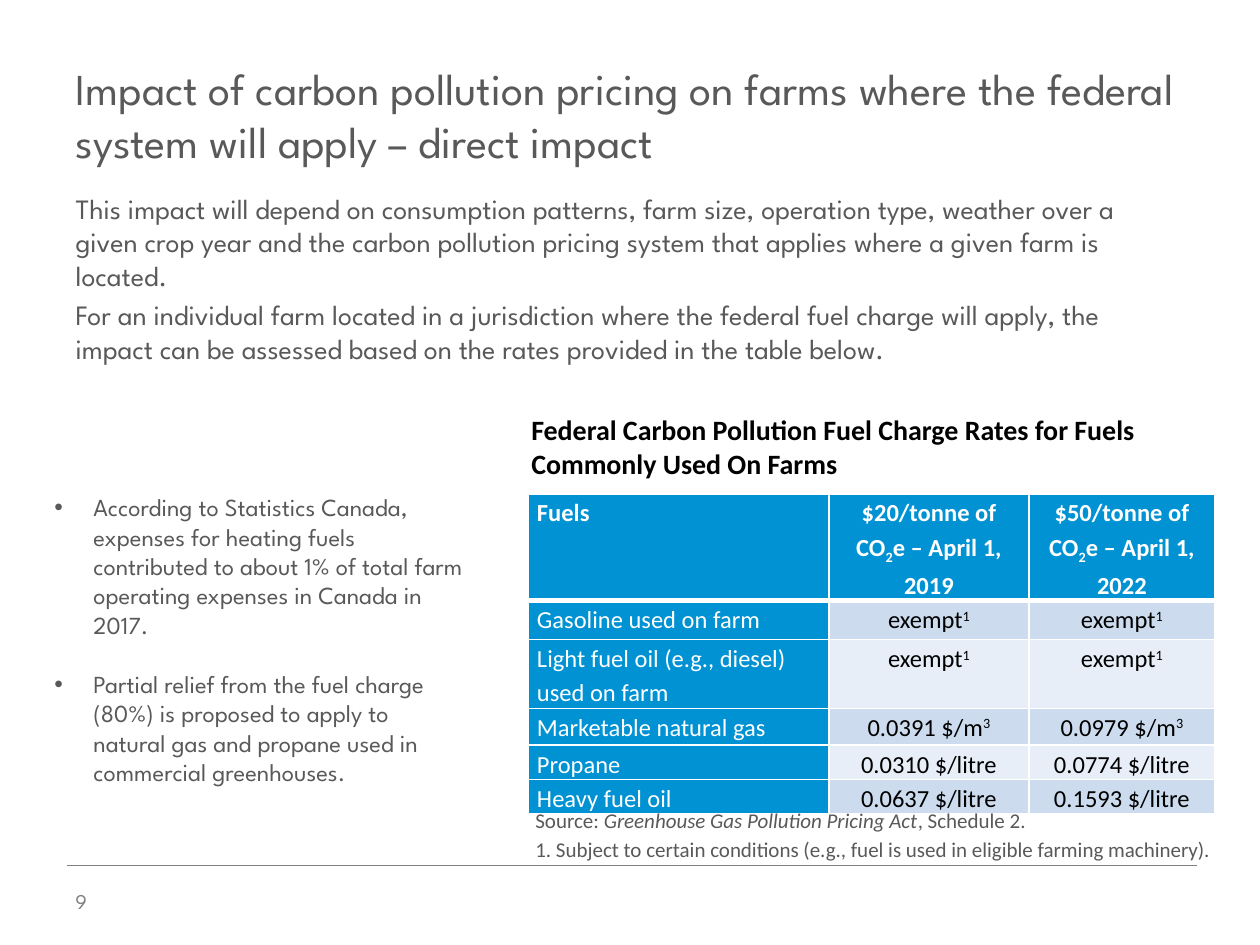
from dataclasses import dataclass, replace

from lxml import etree
from pptx import Presentation
from pptx.dml.color import RGBColor
from pptx.enum.shapes import MSO_CONNECTOR
from pptx.enum.text import MSO_ANCHOR, MSO_AUTO_SIZE, PP_ALIGN
from pptx.oxml.ns import qn
from pptx.util import Emu, Pt

PX_PER_INCH = 126
EMU_PER_INCH = 914400

LEFT, CENTER = PP_ALIGN.LEFT, PP_ALIGN.CENTER
TOP, MIDDLE, BOTTOM = MSO_ANCHOR.TOP, MSO_ANCHOR.MIDDLE, MSO_ANCHOR.BOTTOM
STRAIGHT = MSO_CONNECTOR.STRAIGHT
NO_AUTOFIT = MSO_AUTO_SIZE.NONE

WHITE = RGBColor(0xFF, 0xFF, 0xFF)
BLACK = RGBColor(0x00, 0x00, 0x00)
DARK_GRAY = RGBColor(0x59, 0x59, 0x59)
GRAY = RGBColor(0x7F, 0x7F, 0x7F)
BLUE = RGBColor(0x00, 0x92, 0xD2)
BAND_DARK = RGBColor(0xCC, 0xDC, 0xEE)
BAND_LIGHT = RGBColor(0xE7, 0xEE, 0xF7)

SUBSCRIPT, SUPERSCRIPT = -25000, 30000
BULLET_INDENT = 39


@dataclass(frozen=True)
class Box:
    left: int
    top: int
    width: int
    height: int


@dataclass(frozen=True)
class Style:
    font: str
    size: float
    color: RGBColor
    bold: bool = False


@dataclass(frozen=True)
class Piece:
    text: str
    baseline: int = 0
    italic: bool = False


@dataclass(frozen=True)
class Layout:
    align: PP_ALIGN = LEFT
    line_spacing: float = 1.0
    gap: float = 0
    bullet: str = ""


Line = list[Piece]

TITLE = Style("League Spartan", 25.2, DARK_GRAY)
BODY = replace(TITLE, size=16)
BULLETS = replace(TITLE, size=14)
PAGE_NUMBER = Style("League Spartan", 12, GRAY)
CAPTION = Style("Calibri", 16, BLACK, True)
NOTE = Style("Calibri", 12, DARK_GRAY)
HEADER = Style("Calibri", 14, WHITE, True)
FUEL = replace(HEADER, bold=False)
RATE = replace(FUEL, color=BLACK)

TABLE_BOX = Box(528, 494, 687, 230)
COLUMN_WIDTHS = [301, 200, 186]
ROW_HEIGHTS = [58, 39, 38, 37, 29, 29]


def header_line(price: str, year: str) -> Line:
    return [Piece(f"{price}/tonne of CO"), Piece("2", SUBSCRIPT), Piece(f"e – April 1, {year}")]


def raised(text: str, mark: str) -> Line:
    return [Piece(text), Piece(mark, SUPERSCRIPT)]


EXEMPT = raised("exempt", "1")
FUEL_ROWS = [
    [[Piece("Fuels")], header_line("$20", "2019"), header_line("$50", "2022")],
    [[Piece("Gasoline used on farm")], EXEMPT, EXEMPT],
    [[Piece("Light fuel oil (e.g., diesel) used on farm")], EXEMPT, EXEMPT],
    [[Piece("Marketable natural gas")], raised("0.0391 $/m", "3"), raised("0.0979 $/m", "3")],
    [[Piece("Propane")], [Piece("0.0310 $/litre")], [Piece("0.0774 $/litre")]],
    [[Piece("Heavy fuel oil")], [Piece("0.0637 $/litre")], [Piece("0.1593 $/litre")]],
]


def px(value: int) -> Emu:
    return Emu(round(value * EMU_PER_INCH / PX_PER_INCH))


def set_bullet(paragraph, bullet: str) -> None:
    indent = px(BULLET_INDENT) if bullet else 0
    properties = paragraph._p.get_or_add_pPr()
    properties.set("marL", str(indent))
    properties.set("indent", str(-indent))
    if bullet:
        etree.SubElement(properties, qn("a:buFont")).set("typeface", "Arial")
        etree.SubElement(properties, qn("a:buChar")).set("char", bullet)
    else:
        etree.SubElement(properties, qn("a:buNone"))


def write(text_frame, lines: list[Line], style: Style, layout: Layout = Layout()) -> None:
    for index, line in enumerate(lines):
        paragraph = text_frame.add_paragraph() if index else text_frame.paragraphs[0]
        set_bullet(paragraph, layout.bullet)
        paragraph.alignment = layout.align
        paragraph.line_spacing = layout.line_spacing
        paragraph.space_before = Pt(layout.gap if index else 0)
        for piece in line:
            run = paragraph.add_run()
            run.text = piece.text
            run.font.name = style.font
            run.font.size = Pt(style.size)
            run.font.bold = style.bold
            run.font.italic = piece.italic
            run.font.color.rgb = style.color
            if piece.baseline:
                run._r.get_or_add_rPr().set("baseline", str(piece.baseline))


def fill_text(shape, box: Box, lines: list[Line], style: Style,
              layout: Layout = Layout(), anchor: MSO_ANCHOR = TOP) -> None:
    shape.left, shape.top = px(box.left), px(box.top)
    shape.width, shape.height = px(box.width), px(box.height)
    text_frame = shape.text_frame
    text_frame.word_wrap = True
    text_frame.auto_size = NO_AUTOFIT
    text_frame.vertical_anchor = anchor
    write(text_frame, lines, style, layout)


def add_text(slide, box: Box, lines: list[Line], style: Style,
             layout: Layout = Layout(), anchor: MSO_ANCHOR = TOP) -> None:
    fill_text(slide.shapes.add_textbox(0, 0, 0, 0), box, lines, style, layout, anchor)


def set_borders(cell, row: int) -> None:
    widths = {"L": 1, "R": 1, "T": 3 if row == 1 else 1, "B": 3 if row == 0 else 1}
    properties = cell._tc.get_or_add_tcPr()
    for side, width in widths.items():
        border = etree.SubElement(properties, qn(f"a:ln{side}"), w=str(Pt(width)))
        fill = etree.SubElement(border, qn("a:solidFill"))
        etree.SubElement(fill, qn("a:srgbClr"), val=str(WHITE))


def add_fuel_table(slide) -> None:
    box = TABLE_BOX
    table = slide.shapes.add_table(len(ROW_HEIGHTS), len(COLUMN_WIDTHS), px(box.left),
                                   px(box.top), px(box.width), px(box.height)).table
    for column, width in zip(table.columns, COLUMN_WIDTHS):
        column.width = px(width)
    for row, height in zip(table.rows, ROW_HEIGHTS):
        row.height = px(height)
    for row_index, row in enumerate(FUEL_ROWS):
        for column_index, line in enumerate(row):
            cell = table.cell(row_index, column_index)
            cell.margin_left = cell.margin_right = px(9)
            cell.margin_top = cell.margin_bottom = 0
            set_borders(cell, row_index)
            if row_index == 0:
                style, color = HEADER, BLUE
            elif column_index == 0:
                style, color = FUEL, BLUE
            else:
                style, color = RATE, BAND_DARK if row_index % 2 else BAND_LIGHT
            cell.fill.solid()
            cell.fill.fore_color.rgb = color
            align = CENTER if column_index else LEFT
            write(cell.text_frame, [line], style, Layout(align, 1.15))


def add_footer_line(slide) -> None:
    line = slide.shapes.add_connector(STRAIGHT, px(67), px(865), px(1197), px(865))
    line.line.color.rgb = GRAY
    line.line.width = Pt(0.25)
    etree.SubElement(line._element.spPr, qn("a:effectLst"))


def main() -> None:
    presentation = Presentation()
    presentation.slide_width, presentation.slide_height = px(1260), px(945)
    slide = presentation.slides.add_slide(presentation.slide_layouts[1])
    add_footer_line(slide)
    fill_text(slide.shapes.title, Box(63, 38, 1149, 136), [[Piece("Impact of carbon pollution pricing on farms where the federal system will apply – direct impact")]], TITLE, anchor=BOTTOM)
    fill_text(slide.placeholders[1], Box(63, 185, 1133, 123), [
        [Piece("This impact will depend on consumption patterns, farm size, operation type, weather over a given crop year and the carbon pollution pricing system that applies where a given farm is located.")],
        [Piece("For an individual farm located in a jurisdiction where the federal fuel charge will apply, the impact can be assessed based on the rates provided in the table below.")],
    ], BODY, Layout(gap=3.2))
    add_text(slide, Box(63, 876, 135, 50), [[Piece("9")]], PAGE_NUMBER, anchor=MIDDLE)
    add_fuel_table(slide)
    add_text(slide, Box(519, 406, 696, 81), [[Piece("Federal Carbon Pollution Fuel Charge Rates for Fuels Commonly Used On Farms")]], CAPTION, anchor=MIDDLE)
    add_text(slide, Box(523, 798, 718, 72), [
        [Piece("Source: "), Piece("Greenhouse Gas Pollution Pricing Act", italic=True), Piece(", Schedule 2.")],
        [Piece("1. Subject to certain conditions (e.g., fuel is used in eligible farming machinery).")],
    ], NOTE, Layout(line_spacing=1.15))
    add_text(slide, Box(42, 486, 436, 339), [
        [Piece("According to Statistics Canada, expenses for heating fuels contributed to about 1% of total farm operating expenses in Canada in 2017.")],
        [Piece("Partial relief from the fuel charge (80%) is proposed to apply to natural gas and propane used in commercial greenhouses.")],
    ], BULLETS, Layout(gap=17, bullet="•"))
    presentation.save("out.pptx")


if __name__ == "__main__":
    main()
